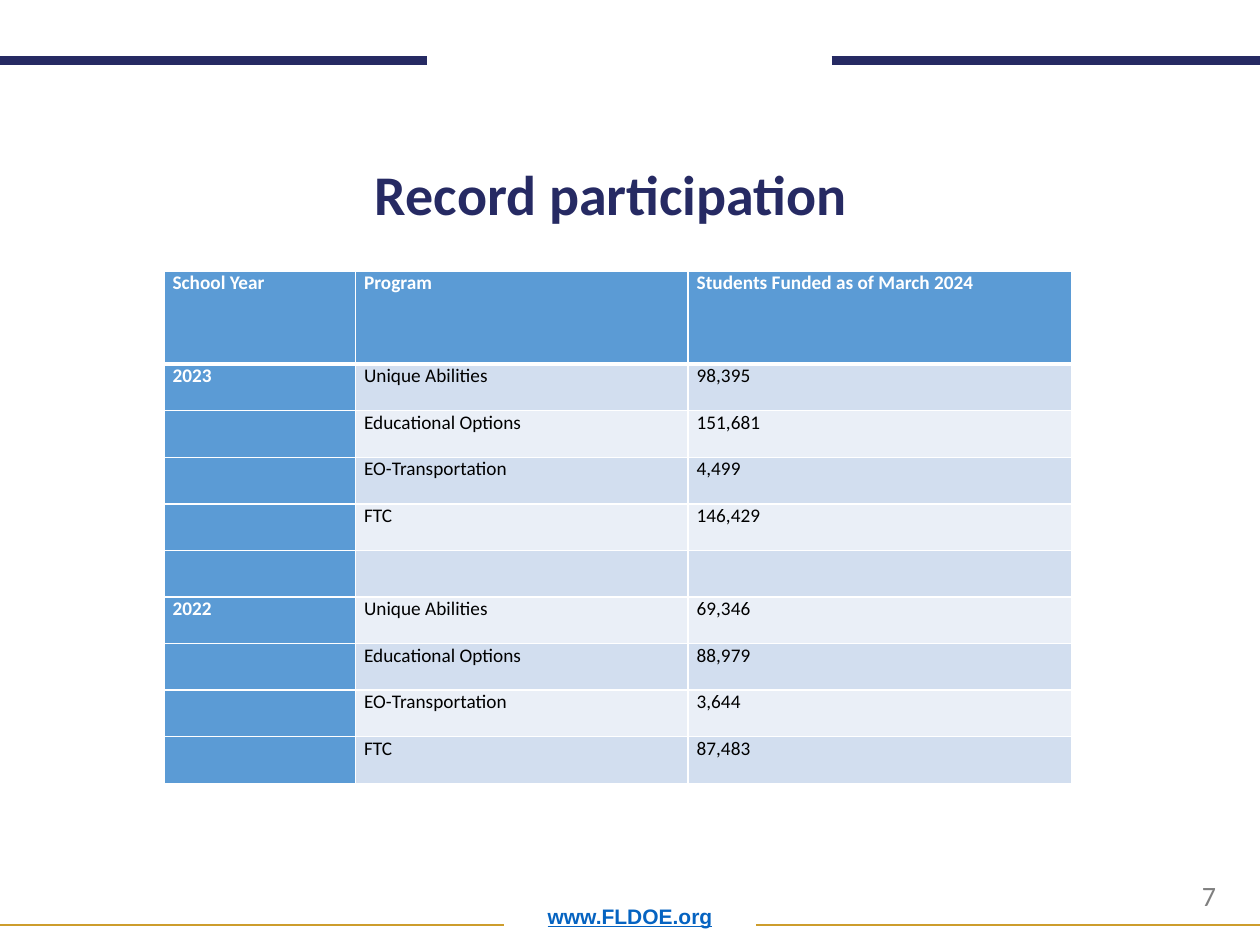
from lxml.etree import SubElement
from pptx import Presentation
from pptx.dml.color import RGBColor
from pptx.enum.shapes import MSO_CONNECTOR
from pptx.enum.text import MSO_ANCHOR, MSO_AUTO_SIZE, PP_ALIGN
from pptx.oxml.ns import qn
from pptx.util import Inches, Pt

NAVY = RGBColor(0x26, 0x2A, 0x63)
GOLD = RGBColor(0xCD, 0x9D, 0x2C)
LINK_BLUE = RGBColor(0x05, 0x63, 0xC1)
GRAY = RGBColor(0x7F, 0x7F, 0x7F)
HEADER_BLUE = RGBColor(0x5B, 0x9B, 0xD5)
BAND_DARK = RGBColor(0xD2, 0xDE, 0xEF)
BAND_LIGHT = RGBColor(0xEA, 0xEF, 0xF7)
WHITE = RGBColor(0xFF, 0xFF, 0xFF)
BLACK = RGBColor(0, 0, 0)

TITLE_FORMAT = {"size": Pt(32), "name": "Calibri", "bold": True}
ADDRESS_FORMAT = {"size": Pt(12), "name": "Arial", "bold": True, "underline": True}
NUMBER_FORMAT = {"size": Pt(16), "name": "Calibri"}
HEADING_FORMAT = {"size": Pt(11), "name": "Calibri", "bold": True}
VALUE_FORMAT = {"size": Pt(11), "name": "Calibri", "bold": False}
CELL_FORMAT = {
    "margin_left": Inches(0.07),
    "margin_right": Inches(0.07),
    "margin_top": 0,
    "margin_bottom": 0,
}

COLUMN_WIDTHS = [1.52, 2.64, 3.05]
HEADER_HEIGHT = 0.74
ROW_HEIGHT = 0.37
ROWS = [
    ("School Year", "Program", "Students Funded as of March 2024"),
    ("2023", "Unique Abilities", "98,395"),
    ("", "Educational Options", "151,681"),
    ("", "EO-Transportation", "4,499"),
    ("", "FTC", "146,429"),
    ("", "", ""),
    ("2022", "Unique Abilities", "69,346"),
    ("", "Educational Options", "88,979"),
    ("", "EO-Transportation", "3,644"),
    ("", "FTC", "87,483"),
]


def apply_format(target, values):
    for name, value in values.items():
        setattr(target, name, value)


def write_text(paragraph, text, text_format, color):
    run = paragraph.add_run()
    run.text = text
    apply_format(run.font, text_format)
    run.font.color.rgb = color


def place(shape, left, top, width, height):
    apply_format(shape, {
        "left": Inches(left),
        "top": Inches(top),
        "width": Inches(width),
        "height": Inches(height),
    })


def add_title(slide, text):
    title = slide.shapes.title
    place(title, 0.54, 0.58, 8.62, 1.28)
    apply_format(title.text_frame, {
        "word_wrap": True,
        "auto_size": MSO_AUTO_SIZE.NONE,
        "vertical_anchor": MSO_ANCHOR.BOTTOM,
    })
    paragraph = title.text_frame.paragraphs[0]
    apply_format(paragraph, {"alignment": PP_ALIGN.CENTER, "line_spacing": 0.9})
    write_text(paragraph, text, TITLE_FORMAT, NAVY)


def add_text(slide, box, text, text_format, color, frame_format, paragraph_format):
    text_box = slide.shapes.add_textbox(*map(Inches, box))
    text_box.text_frame.word_wrap = True
    apply_format(text_box.text_frame, frame_format)
    paragraph = text_box.text_frame.paragraphs[0]
    apply_format(paragraph, paragraph_format)
    write_text(paragraph, text, text_format, color)


def add_rule(slide, start, end, top, color, width):
    rule = slide.shapes.add_connector(
        MSO_CONNECTOR.STRAIGHT, Inches(start), Inches(top), Inches(end), Inches(top)
    )
    rule.line.color.rgb = color
    rule.line.width = Pt(width)
    SubElement(rule._element.spPr, qn("a:effectLst"))


def add_borders(cell, bottom_width, top_width):
    properties = cell._tc.get_or_add_tcPr()
    widths = {"lnL": 1, "lnR": 1, "lnT": top_width, "lnB": bottom_width}
    for side, width in widths.items():
        line = SubElement(properties, qn(f"a:{side}"), w=str(Pt(width)))
        fill = SubElement(line, qn("a:solidFill"))
        SubElement(fill, qn("a:srgbClr"), val=str(WHITE))


def fill_cell(cell, text, row, column):
    is_heading = row == 0 or column == 0
    apply_format(cell, CELL_FORMAT)
    add_borders(cell, 3 if row == 0 else 1, 3 if row == 1 else 1)
    cell.fill.solid()
    band = BAND_DARK if row % 2 else BAND_LIGHT
    cell.fill.fore_color.rgb = HEADER_BLUE if is_heading else band
    if text:
        text_format = HEADING_FORMAT if is_heading else VALUE_FORMAT
        color = WHITE if is_heading else BLACK
        write_text(cell.text_frame.paragraphs[0], text, text_format, color)


def add_participation_table(slide):
    height = HEADER_HEIGHT + ROW_HEIGHT * (len(ROWS) - 1)
    table = slide.shapes.add_table(
        len(ROWS), len(COLUMN_WIDTHS),
        Inches(1.3), Inches(2.15), Inches(sum(COLUMN_WIDTHS)), Inches(height),
    ).table
    table.first_col = True
    for column, width in zip(table.columns, COLUMN_WIDTHS):
        column.width = Inches(width)
    for row, texts in enumerate(ROWS):
        table.rows[row].height = Inches(ROW_HEIGHT if row else HEADER_HEIGHT)
        for column, text in enumerate(texts):
            fill_cell(table.cell(row, column), text, row, column)


def main():
    presentation = Presentation()
    presentation.slide_width = Inches(10)
    presentation.slide_height = Inches(7.5)
    slide = presentation.slides.add_slide(presentation.slide_layouts[5])

    add_text(
        slide, (0.69, 7, 8.62, 0.42), "www.FLDOE.org", ADDRESS_FORMAT, LINK_BLUE,
        {"vertical_anchor": MSO_ANCHOR.BOTTOM},
        {"alignment": PP_ALIGN.CENTER, "line_spacing": 0.9},
    )
    for start, end in [(0, 3.39), (6.6, 10)]:
        add_rule(slide, start, end, 0.48, NAVY, 5)
    for start, end in [(0, 4), (6, 10)]:
        add_rule(slide, start, end, 7.34, GOLD, 1)
    add_text(
        slide, (9.44, 6.92, 0.52, 0.37), "7", NUMBER_FORMAT, GRAY,
        {"auto_size": MSO_AUTO_SIZE.SHAPE_TO_FIT_TEXT}, {},
    )
    add_participation_table(slide)
    add_title(slide, "Record participation")
    presentation.save("out.pptx")


if __name__ == "__main__":
    main()
